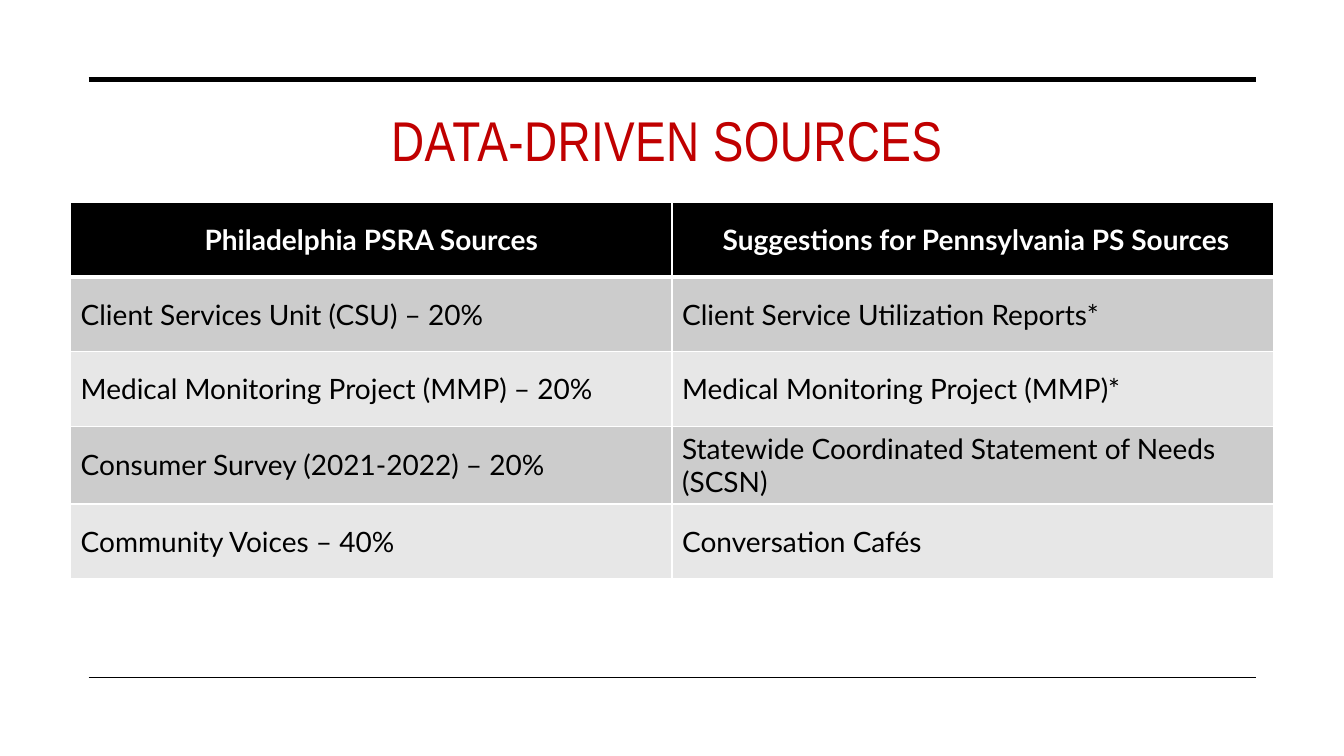
from lxml import etree
from pptx import Presentation
from pptx.dml.color import RGBColor
from pptx.enum.shapes import MSO_CONNECTOR
from pptx.enum.text import MSO_ANCHOR, PP_ALIGN
from pptx.oxml.ns import qn
from pptx.util import Inches, Pt

STRAIGHT = MSO_CONNECTOR.STRAIGHT
TOP, MIDDLE = MSO_ANCHOR.TOP, MSO_ANCHOR.MIDDLE
LEFT, CENTER = PP_ALIGN.LEFT, PP_ALIGN.CENTER
BLACK = RGBColor(0x00, 0x00, 0x00)
WHITE = RGBColor(0xFF, 0xFF, 0xFF)
RED = RGBColor(0xC0, 0x00, 0x00)
DARK_BAND = RGBColor(0xCC, 0xCC, 0xCC)
LIGHT_BAND = RGBColor(0xE7, 0xE7, 0xE7)

SOURCES = [
    ("Philadelphia PSRA Sources", " Suggestions for Pennsylvania PS Sources"),
    ("Client Services Unit (CSU) – 20%", "Client Service Utilization Reports*"),
    ("Medical Monitoring Project (MMP) – 20%", "Medical Monitoring Project (MMP)*"),
    ("Consumer Survey (2021-2022) – 20%", "Statewide Coordinated Statement of Needs (SCSN)"),
    ("Community Voices – 40%", "Conversation Cafés"),
]


def add_border(cell, side, width, color):
    ln = etree.SubElement(cell._tc.get_or_add_tcPr(), qn("a:" + side), w=str(Pt(width)))
    fill = etree.SubElement(ln, qn("a:solidFill"))
    etree.SubElement(fill, qn("a:srgbClr"), val=str(color))


prs = Presentation()
prs.slide_width = Inches(13.33)
prs.slide_height = Inches(7.5)
s = prs.slides.add_slide(prs.slide_layouts[5])

for y, weight in [(0.79, 3.5), (6.72, 1)]:
    rule = s.shapes.add_connector(STRAIGHT, Inches(0.88), Inches(y), Inches(12.46), Inches(y))
    rule.line.color.rgb = BLACK
    rule.line.width = Pt(weight)
    etree.SubElement(rule._element.spPr, qn("a:effectLst"))

title = s.shapes.title
title.left, title.top = Inches(0.77), Inches(1)
title.width, title.height = Inches(11.69), Inches(1.43)
tf = title.text_frame
tf.text = "DATA-DRIVEN SOURCES"
tf.word_wrap = True
tf.vertical_anchor = TOP
p = tf.paragraphs[0]
p.alignment = CENTER
p.font.name = "Arial Narrow"
p.font.size = Pt(40)
p.font.color.rgb = RED
p.runs[0].font._element.set("spc", "30")

table = s.shapes.add_table(
    len(SOURCES), 2, Inches(0.7), Inches(2.01), Inches(11.93), Inches(3.7)
).table
for row, texts in enumerate(SOURCES):
    header = row == 0
    table.rows[row].height = Inches(0.74)
    for col, text in enumerate(texts):
        cell = table.cell(row, col)
        cell.text = text
        cell.vertical_anchor = MIDDLE
        for side in ("lnL", "lnR", "lnT", "lnB"):
            thick = (header and side == "lnB") or (row == 1 and side == "lnT")
            add_border(cell, side, 3 if thick else 1, WHITE)
        cell.fill.solid()
        cell.fill.fore_color.rgb = BLACK if header else DARK_BAND if row % 2 else LIGHT_BAND
        p = cell.text_frame.paragraphs[0]
        p.alignment = CENTER if header else LEFT
        p.font.name = "Lato"
        p.font.size = Pt(20)
        p.font.bold = header
        p.font.color.rgb = WHITE if header else BLACK

prs.save("out.pptx")
